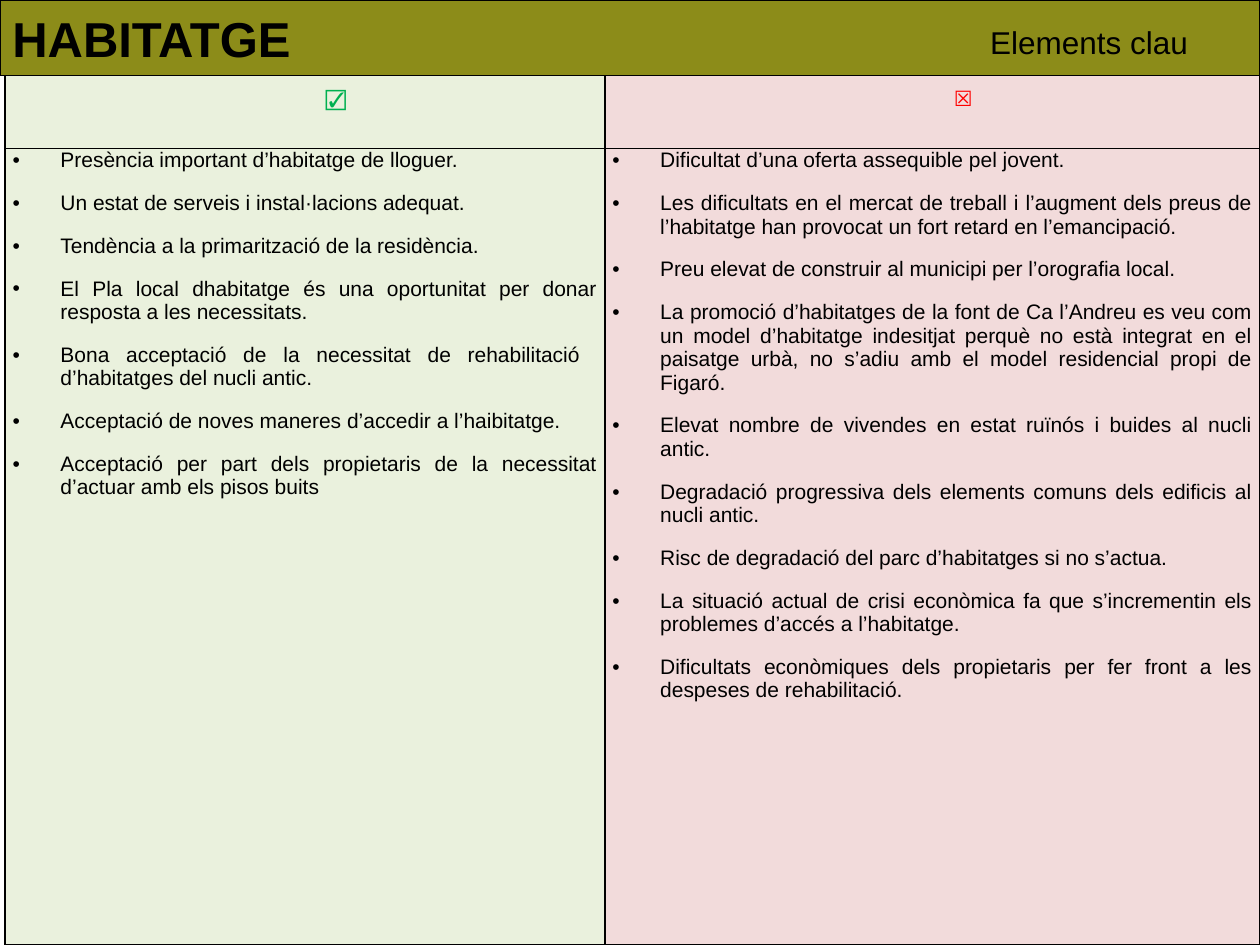
from dataclasses import dataclass

from lxml.etree import SubElement
from pptx import Presentation
from pptx.dml.color import RGBColor
from pptx.enum.shapes import MSO_SHAPE
from pptx.enum.text import MSO_ANCHOR, PP_ALIGN
from pptx.oxml.ns import qn
from pptx.util import Inches, Pt


@dataclass(frozen=True)
class Theme:
    """Colours, font and type sizes of the slide."""
    font: str = "Arial"
    ink: str = "000000"
    band: str = "808000"
    band_opacity: int = 90
    strength_fill: str = "EAF1DD"
    strength_mark: str = "00B050"
    weakness_fill: str = "F2DBDB"
    weakness_mark: str = "FF0000"
    title_size: int = 28
    subtitle_size: int = 18
    body_size: int = 12


THEME = Theme()

STRENGTHS = [
    "Presència important d’habitatge de lloguer. ",
    "Un estat de serveis i instal·lacions adequat.",
    "Tendència a la primarització de la residència.",
    "El Pla local dhabitatge és una oportunitat per donar resposta a les necessitats.",
    "Bona acceptació de la necessitat de rehabilitació  d’habitatges del nucli antic.",
    "Acceptació de noves maneres d’accedir a l’haibitatge.",
    "Acceptació per part dels propietaris de la necessitat d’actuar amb els pisos buits",
]
WEAKNESSES = [
    "Dificultat d’una oferta assequible pel jovent.",
    "Les dificultats en el mercat de treball i l’augment dels preus de l’habitatge "
    "han provocat un fort retard en l’emancipació.",
    "Preu elevat de construir al municipi per l’orografia local.",
    "La promoció d’habitatges de la font de Ca l’Andreu es veu com un model "
    "d’habitatge indesitjat perquè no està integrat en el paisatge urbà, no s’adiu "
    "amb el model residencial propi de Figaró.",
    "Elevat nombre de vivendes en estat ruïnós i buides al nucli antic.",
    "Degradació progressiva dels elements comuns dels edificis al nucli antic.",
    "Risc de degradació del parc d’habitatges si no s’actua.",
    "La situació actual de crisi econòmica fa que s’incrementin els problemes "
    "d’accés a l’habitatge.",
    "Dificultats econòmiques dels propietaris per fer front a les despeses de "
    "rehabilitació.",
]
COLUMNS = [
    ("☑", THEME.strength_mark, THEME.strength_fill, STRENGTHS, 4.76),
    ("☒", THEME.weakness_mark, THEME.weakness_fill, WEAKNESSES, 5.2),
]
ROW_HEIGHTS = (0.58, 6.32)

MARK_FORMAT = {"alignment": PP_ALIGN.CENTER, "line_spacing": 1.5}
ITEM_FORMAT = {
    "alignment": PP_ALIGN.JUSTIFY,
    "space_before": Pt(5),
    "space_after": Pt(6),
}
CELL_FORMAT = {
    "margin_left": Inches(0.06),
    "margin_right": Inches(0.06),
    "margin_top": 0,
    "margin_bottom": 0,
    "vertical_anchor": MSO_ANCHOR.TOP,
}


def apply_format(target, values):
    """Set each named attribute of the target."""
    for name, value in values.items():
        setattr(target, name, value)


def write(paragraph, text, size, color=THEME.ink, bold=False):
    """Add one styled run to a paragraph."""
    run = paragraph.add_run()
    run.text = text
    apply_format(run.font, {"name": THEME.font, "size": Pt(size), "bold": bold})
    run.font.color.rgb = RGBColor.from_string(color)


def indent(paragraph, margin, first_line, bullet=None):
    """Set the indents of a paragraph and its optional bullet."""
    properties = paragraph._p.get_or_add_pPr()
    properties.set("marL", str(Inches(margin)))
    properties.set("indent", str(Inches(first_line)))
    if bullet:
        SubElement(properties, qn("a:buFont"), typeface=THEME.font)
        SubElement(properties, qn("a:buChar"), char=bullet)


def style_cell(cell, fill):
    """Give a cell its margins, black borders and fill."""
    apply_format(cell, CELL_FORMAT)
    properties = cell._tc.get_or_add_tcPr()
    for side in ("lnL", "lnR", "lnT", "lnB"):
        border = SubElement(properties, qn(f"a:{side}"), w=str(Pt(1)))
        SubElement(SubElement(border, qn("a:solidFill")), qn("a:srgbClr"), val=THEME.ink)
    cell.fill.solid()
    cell.fill.fore_color.rgb = RGBColor.from_string(fill)


def add_balance_table(slide, left, top, width, height):
    """Place the table of strengths and weaknesses in the given box."""
    table = slide.shapes.add_table(
        len(ROW_HEIGHTS), len(COLUMNS), left, top, width, height
    ).table
    apply_format(table, {"first_row": False, "horz_banding": False})
    for row, row_height in zip(table.rows, ROW_HEIGHTS):
        row.height = Inches(row_height)
    for index, (mark, mark_color, fill, items, column_width) in enumerate(COLUMNS):
        table.columns[index].width = Inches(column_width)
        heading, body = table.cell(0, index), table.cell(1, index)
        for cell in (heading, body):
            style_cell(cell, fill)
        mark_line = heading.text_frame.paragraphs[0]
        apply_format(mark_line, MARK_FORMAT)
        indent(mark_line, 0, 0.49)
        write(mark_line, mark, THEME.body_size, mark_color)
        frame = body.text_frame
        for number, item in enumerate(items):
            item_line = frame.add_paragraph() if number else frame.paragraphs[0]
            apply_format(item_line, ITEM_FORMAT)
            indent(item_line, 0.38, -0.38, "•")
            write(item_line, item, THEME.body_size)


def add_title_band(slide, left, top, width, height):
    """Place the title band and its subtitle in the given box."""
    band = slide.shapes.add_shape(MSO_SHAPE.RECTANGLE, left, top, width, height)
    band.shadow.inherit = False
    band.fill.solid()
    band.fill.fore_color.rgb = RGBColor.from_string(THEME.band)
    band_color = band.fill._xPr.find(qn("a:solidFill")).find(qn("a:srgbClr"))
    SubElement(band_color, qn("a:alpha"), val=str(THEME.band_opacity * 1000))
    band.line.color.rgb = RGBColor.from_string(THEME.ink)
    band.line.width = Pt(0.75)
    apply_format(
        band.text_frame, {"word_wrap": True, "vertical_anchor": MSO_ANCHOR.MIDDLE}
    )
    title = band.text_frame.paragraphs[0]
    title.alignment = PP_ALIGN.LEFT
    write(title, "HABITATGE", THEME.title_size, bold=True)

    subtitle_width = Inches(2.24)
    subtitle = slide.shapes.add_textbox(
        left + width - subtitle_width, top + Inches(0.13), subtitle_width, Inches(0.4)
    )
    subtitle.text_frame.word_wrap = True
    write(subtitle.text_frame.paragraphs[0], "Elements clau", THEME.subtitle_size)


def main():
    """Build the slide and save it."""
    presentation = Presentation()
    apply_format(
        presentation, {"slide_width": Inches(10), "slide_height": Inches(7.5)}
    )
    slide = presentation.slides.add_slide(presentation.slide_layouts[6])
    add_balance_table(slide, Inches(0.04), Inches(0.6), Inches(9.96), Inches(6.9))
    add_title_band(slide, 0, 0, Inches(10), Inches(0.6))
    presentation.save("out.pptx")


if __name__ == "__main__":
    main()
